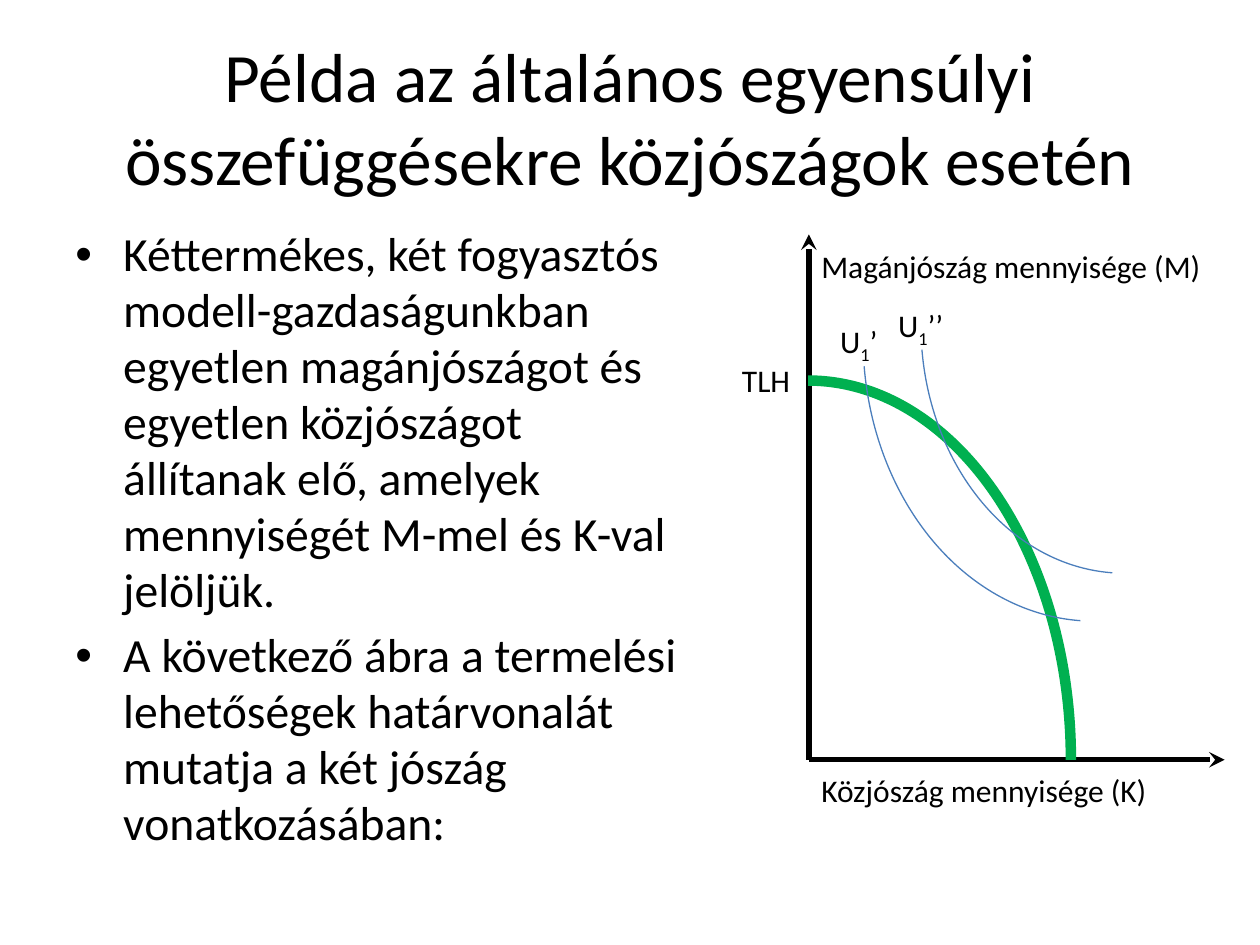
from dataclasses import dataclass

from lxml.etree import SubElement
from pptx import Presentation
from pptx.dml.color import RGBColor
from pptx.enum.shapes import MSO_CONNECTOR, MSO_SHAPE
from pptx.enum.text import MSO_ANCHOR, MSO_AUTO_SIZE, PP_ALIGN
from pptx.oxml.ns import qn
from pptx.util import Emu, Pt

PX = 9144  # 100 px to the inch
FONT = "Calibri"
BLACK, GREEN, BLUE = "000000", "00B050", "4B7EBC"
ORIGIN = (642, 603)
LABEL_HEIGHT = 40


@dataclass
class Curve:
    left: int
    top: int
    width: int
    height: int
    color: str
    weight: float
    angles: tuple[float, ...] = ()  # start and end in degrees


@dataclass
class Label:
    left: int
    top: int
    width: int
    text: str
    subscript: str = ""
    suffix: str = ""


TITLE = "Példa az általános egyensúlyi összefüggésekre közjószágok esetén"
BULLETS = [
    "Kéttermékes, két fogyasztós modell-gazdaságunkban egyetlen magánjószágot "
    "és egyetlen közjószágot állítanak elő, amelyek mennyiségét M-mel és K-val jelöljük.",
    "A következő ábra a termelési lehetőségek határvonalát mutatja a két jószág "
    "vonatkozásában:",
]
AXIS_ENDS = [(642, 186), (972, 603)]
INDIFFERENCE_ANGLES = (92.81, 173.06)
CURVES = [
    Curve(433, 302, 417, 602, GREEN, 6),
    Curve(731, 61, 323, 394, BLUE, 0.75, INDIFFERENCE_ANGLES),
    Curve(685, 44, 367, 449, BLUE, 0.75, INDIFFERENCE_ANGLES),
]
LABELS = [
    Label(642, 607, 323, "Közjószág mennyisége (K)"),
    Label(642, 191, 323, "Magánjószág mennyisége (M)"),
    Label(579, 282, 63, "TLH"),
    Label(657, 251, 55, "U", "1", "’"),
    Label(703, 238, 80, "U", "1", "’’"),
]


def px(*lengths: int) -> list[Emu]:
    return [Emu(length * PX) for length in lengths]


def rgb(color: str) -> RGBColor:
    return RGBColor.from_string(color)


def set_font(paragraph, size: float) -> None:
    font = paragraph.font
    font.name, font.size = FONT, Pt(size)
    font.color.rgb = rgb(BLACK)


def set_line(line, color: str, weight: float) -> None:
    line.color.rgb = rgb(color)
    line.width = Pt(weight)


def write_title(slide) -> None:
    title = slide.shapes.title
    title.left, title.top, title.width, title.height = px(50, 30, 900, 125)
    frame = title.text_frame
    frame.text = TITLE
    frame.auto_size = MSO_AUTO_SIZE.NONE
    frame.vertical_anchor = MSO_ANCHOR.MIDDLE
    frame.paragraphs[0].alignment = PP_ALIGN.CENTER
    set_font(frame.paragraphs[0], 39.6)


def add_bullet(paragraph) -> None:
    """Hang the paragraph behind a round bullet."""
    properties = paragraph._p.get_or_add_pPr()
    properties.set("marL", str(38 * PX))
    properties.set("indent", str(-38 * PX))
    font = SubElement(properties, qn("a:buFont"))
    font.set("typeface", "Arial")
    SubElement(properties, qn("a:buChar")).set("char", "•")


def write_body(slide) -> None:
    frame = slide.shapes.add_textbox(*px(50, 175, 497, 523)).text_frame
    frame.word_wrap = True
    for index, text in enumerate(BULLETS):
        paragraph = frame.add_paragraph() if index else frame.paragraphs[0]
        paragraph.text = text
        paragraph.line_spacing = 0.98
        paragraph.space_before = Pt(5)
        add_bullet(paragraph)
        set_font(paragraph, 27.2)


def draw_axis(slide, end: tuple[int, int]) -> None:
    axis = slide.shapes.add_connector(MSO_CONNECTOR.STRAIGHT, *px(*ORIGIN, *end))
    set_line(axis.line, BLACK, 3)
    SubElement(axis.line._get_or_add_ln(), qn("a:tailEnd")).set("type", "stealth")
    SubElement(axis._element.spPr, qn("a:effectLst"))


def draw_curve(slide, curve: Curve) -> None:
    bounds = px(curve.left, curve.top, curve.width, curve.height)
    arc = slide.shapes.add_shape(MSO_SHAPE.ARC, *bounds)
    for index, angle in enumerate(curve.angles):
        arc.adjustments[index] = angle * 0.6  # 60000 units per degree, over 100000
    arc.fill.background()
    arc.shadow.inherit = False
    set_line(arc.line, curve.color, curve.weight)


def write_label(slide, label: Label) -> None:
    bounds = px(label.left, label.top, label.width, LABEL_HEIGHT)
    frame = slide.shapes.add_textbox(*bounds).text_frame
    frame.word_wrap = True
    frame.auto_size = MSO_AUTO_SIZE.SHAPE_TO_FIT_TEXT
    paragraph = frame.paragraphs[0]
    set_font(paragraph, 18)
    paragraph.add_run().text = label.text
    if label.subscript:
        index = paragraph.add_run()
        index.text = label.subscript
        index.font._element.set("baseline", "-25000")
        paragraph.add_run().text = label.suffix


def main() -> None:
    deck = Presentation()
    deck.slide_width, deck.slide_height = px(1000, 750)
    slide = deck.slides.add_slide(deck.slide_layouts[5])
    write_title(slide)
    write_body(slide)
    for end in AXIS_ENDS:
        draw_axis(slide, end)
    for curve in CURVES:
        draw_curve(slide, curve)
    for label in LABELS:
        write_label(slide, label)
    deck.save("out.pptx")


if __name__ == "__main__":
    main()
